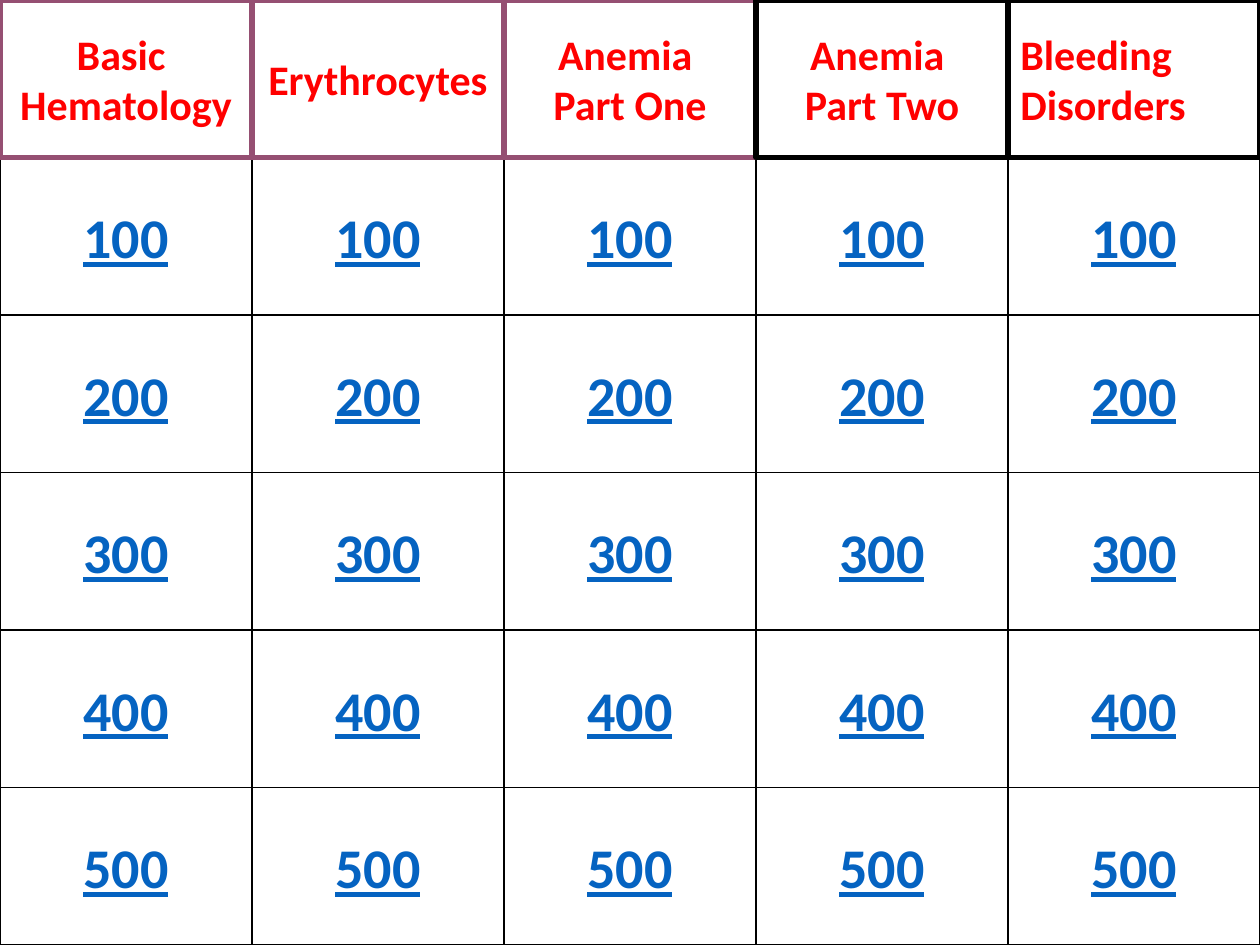
import pptx
import pptx.dml.color
import pptx.enum.shapes
import pptx.enum.text
import pptx.util

SHAPES = pptx.enum.shapes.MSO_SHAPE
ALIGN = pptx.enum.text.PP_ALIGN

# Each category: paragraphs (each a list of lines), border colour, alignment
CATEGORIES = [
    ([["Basic "], ["Hematology"]], "954F72", ALIGN.CENTER),
    ([["Erythrocytes"]], "954F72", ALIGN.CENTER),
    ([["Anemia ", "Part One"]], "954F72", ALIGN.CENTER),
    ([["Anemia ", "Part Two"]], "000000", ALIGN.CENTER),
    ([["Bleeding"], ["Disorders"]], "000000", ALIGN.LEFT),
]
POINTS = ["100", "200", "300", "400", "500"]

SLIDE_WIDTH, SLIDE_HEIGHT = 10, 7.5
CELL_WIDTH = SLIDE_WIDTH / len(CATEGORIES)
CELL_HEIGHT = SLIDE_HEIGHT / (len(POINTS) + 1)


def color(value):
    return pptx.dml.color.RGBColor.from_string(value)


def write_text(shape, paragraphs, *, size, text_color, align, underline=None):
    frame = shape.text_frame
    frame.word_wrap = False
    frame.vertical_anchor = pptx.enum.text.MSO_ANCHOR.MIDDLE
    for index, lines in enumerate(paragraphs):
        paragraph = frame.add_paragraph() if index else frame.paragraphs[0]
        paragraph.alignment = align
        for number, line in enumerate(lines):
            if number:
                paragraph.add_line_break()
            run = paragraph.add_run()
            run.text = line
            run.font.name = "Calibri"
            run.font.size = pptx.util.Pt(size)
            run.font.bold = True
            run.font.underline = underline
            run.font.color.rgb = color(text_color)


def add_cell(slide, kind, column, row, line_color, line_width):
    shape = slide.shapes.add_shape(
        kind,
        pptx.util.Inches(column * CELL_WIDTH),
        pptx.util.Inches(row * CELL_HEIGHT),
        pptx.util.Inches(CELL_WIDTH),
        pptx.util.Inches(CELL_HEIGHT),
    )
    shape.shadow.inherit = False
    shape.fill.solid()
    shape.fill.fore_color.rgb = color("FFFFFF")
    shape.line.color.rgb = color(line_color)
    shape.line.width = pptx.util.Pt(line_width)
    return shape


def main():
    presentation = pptx.Presentation()
    presentation.slide_width = pptx.util.Inches(SLIDE_WIDTH)
    presentation.slide_height = pptx.util.Inches(SLIDE_HEIGHT)
    slide = presentation.slides.add_slide(presentation.slide_layouts[6])

    for column in range(len(CATEGORIES)):
        for row, points in enumerate(POINTS, start=1):
            button = add_cell(slide, SHAPES.ACTION_BUTTON_CUSTOM, column, row, "000000", 0.75)
            write_text(button, [[points]], size=32, text_color="0563C1",
                       align=ALIGN.CENTER, underline=True)

    for column, (paragraphs, border, align) in enumerate(CATEGORIES):
        header = add_cell(slide, SHAPES.RECTANGLE, column, 0, border, 3)
        write_text(header, paragraphs, size=24, text_color="FF0000", align=align)

    presentation.save("out.pptx")


if __name__ == "__main__":
    main()
